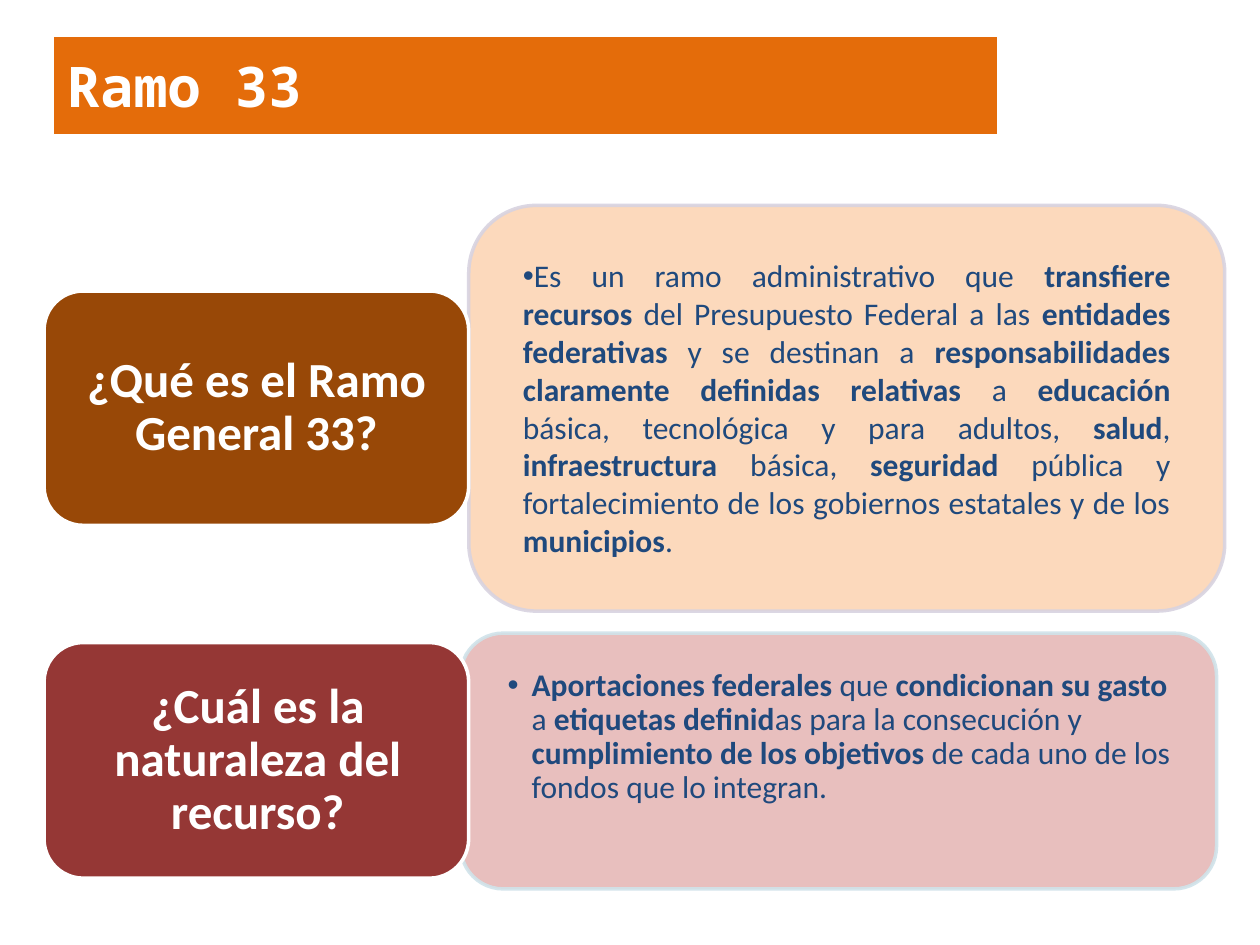
from dataclasses import dataclass

from lxml import etree
from pptx import Presentation
from pptx.dml.color import RGBColor
from pptx.enum.shapes import MSO_SHAPE as Shape
from pptx.enum.text import MSO_ANCHOR as Anchor, PP_ALIGN as Align
from pptx.oxml.ns import qn
from pptx.util import Inches, Pt

Box = tuple[float, float, float, float]
FONT = "Calibri"


@dataclass
class Topic:
    """A question label and its answer panel; asterisks enclose bold words."""
    question: str
    answer: str
    label: Box
    label_text: Box
    label_fill: str
    panel: Box
    panel_text: Box
    panel_fill: str
    panel_line: str
    align: Align
    hanging: float
    spacing: float
    bottom: float


TOPICS = [
    Topic("¿Qué es el Ramo General 33?",
          "Es un ramo administrativo que *transfiere recursos *del Presupuesto "
          "Federal a las *entidades federativas *y se destinan a "
          "*responsabilidades claramente definidas relativas *a *educación* "
          "básica, tecnológica y para adultos, *salud*, *infraestructura* "
          "básica, *seguridad* pública y fortalecimiento de los gobiernos "
          "estatales y de los *municipios*.",
          (0.35, 2.31, 3.37, 1.86), (0.44, 2.4, 3.19, 1.68), "984807",
          (5.11, 0.24, 3.22, 6), (3.88, 1.78, 5.68, 2.91), "FCD5B5", "D8D3E0",
          Align.JUSTIFY, 0, 1.0, 0.14),
    Topic("¿Cuál es la naturaleza del recurso?",
          "*Aportaciones federales *que *condicionan su gasto* a *etiquetas "
          "definid*as para la consecución y *cumplimiento de los objetivos *"
          "de cada uno de los fondos que lo integran.",
          (0.35, 5.1, 3.37, 1.87), (0.45, 5.19, 3.19, 1.69), "953735",
          (5.64, 3.04, 2.03, 6), (3.76, 5.12, 5.8, 1.83), "E6B9B8", "D0E3EA",
          Align.LEFT, 0.19, 0.9, 0.51),
]


def rgb(value: str) -> RGBColor:
    return RGBColor.from_string(value)


def add_block(s, kind: Shape, box: Box, fill: str, line: str | None = None,
              opacity: int = 100, rotation: float = 0):
    sp = s.shapes.add_shape(kind, *map(Inches, box))
    sp.shadow.inherit = False
    sp.rotation = rotation
    sp.fill.solid()
    sp.fill.fore_color.rgb = rgb(fill)
    if line:
        sp.line.color.rgb = rgb(line)
        sp.line.width = Pt(2)
    else:
        sp.line.fill.background()
    if opacity < 100:
        for color in sp._element.spPr.iter(qn("a:srgbClr")):
            etree.SubElement(color, qn("a:alpha"), val=str(opacity * 1000))
    return sp


def write(tf, text: str, font: str, size: float, color: str, align: Align,
          spacing: float = 1.0):
    """Fill the frame, making every second asterisk-separated part bold."""
    tf.word_wrap = True
    tf.vertical_anchor = Anchor.MIDDLE
    p = tf.paragraphs[0]
    p.alignment = align
    p.line_spacing = spacing
    for i, part in enumerate(text.split("*")):
        if part:
            r = p.add_run()
            r.text = part
            r.font.name = font
            r.font.size = Pt(size)
            r.font.bold = i % 2 == 1
            r.font.color.rgb = rgb(color)
    return p


def add_frame(s, box: Box, side: float, top: float, bottom: float):
    tf = s.shapes.add_textbox(*map(Inches, box)).text_frame
    tf.margin_left = tf.margin_right = Inches(side)
    tf.margin_top, tf.margin_bottom = Inches(top), Inches(bottom)
    return tf


def add_bullet(p, hanging: float) -> None:
    pPr = p._p.get_or_add_pPr()
    pPr.set("marL", str(Inches(hanging)))
    pPr.set("indent", str(-Inches(hanging)))
    etree.SubElement(pPr, qn("a:buFont"), typeface="Arial")
    etree.SubElement(pPr, qn("a:buChar"), char="•")


def add_topic(s, topic: Topic) -> None:
    add_block(s, Shape.ROUNDED_RECTANGLE, topic.panel, topic.panel_fill,
              topic.panel_line, opacity=90, rotation=90)
    tf = add_frame(s, topic.panel_text, 0.27, 0.14, topic.bottom)
    p = write(tf, topic.answer, FONT, 18, "1F497D", topic.align, topic.spacing)
    add_bullet(p, topic.hanging)

    add_block(s, Shape.ROUNDED_RECTANGLE, topic.label, topic.label_fill, "FFFFFF")
    tf = add_frame(s, topic.label_text, 0.12, 0.06, 0.06)
    write(tf, f"*{topic.question}*", FONT, 28, "FFFFFF", Align.CENTER, 0.9)


def main() -> None:
    prs = Presentation()
    prs.slide_width, prs.slide_height = Inches(10), Inches(7.5)
    s = prs.slides.add_slide(prs.slide_layouts[6])
    for topic in TOPICS:
        add_topic(s, topic)
    title = add_block(s, Shape.FLOWCHART_PROCESS, (0.43, 0.29, 7.48, 0.77), "E46C0A")
    write(title.text_frame, "*Ramo 33*", "Noto Sans Mono", 32, "FFFFFF", Align.LEFT)
    prs.save("out.pptx")


if __name__ == "__main__":
    main()
